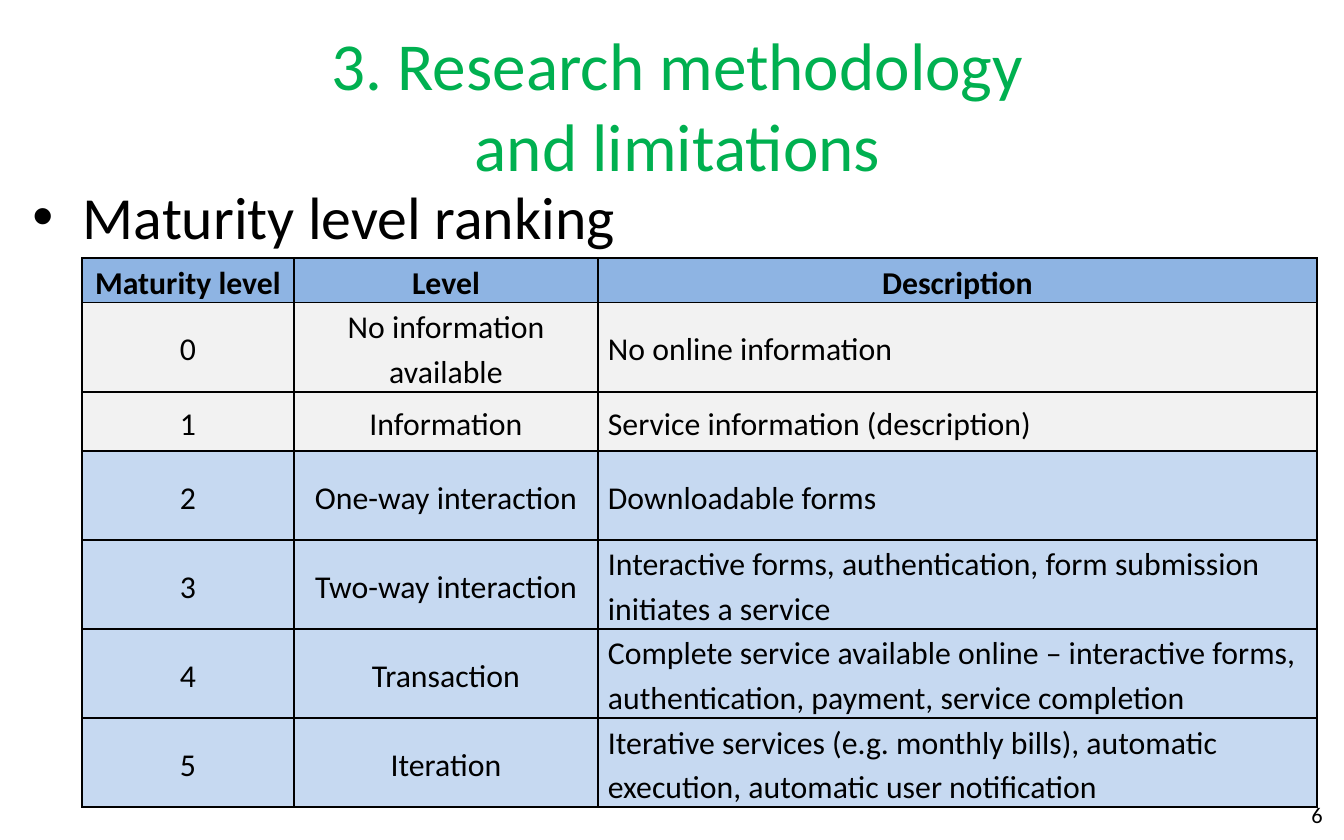
"""Build the maturity level ranking slide."""
from dataclasses import dataclass

from lxml import etree
from pptx import Presentation
from pptx.dml.color import RGBColor
from pptx.enum.text import MSO_ANCHOR, MSO_AUTO_SIZE, PP_ALIGN
from pptx.oxml.ns import qn
from pptx.util import Pt

EMU_PER_PX = 914400 / 134.4
LEFT, CENTER, RIGHT, JUSTIFY = PP_ALIGN.LEFT, PP_ALIGN.CENTER, PP_ALIGN.RIGHT, PP_ALIGN.JUSTIFY
TOP, MIDDLE = MSO_ANCHOR.TOP, MSO_ANCHOR.MIDDLE
FIXED_SIZE = MSO_AUTO_SIZE.NONE
TITLE_AND_CONTENT = 1


@dataclass(frozen=True)
class Theme:
    font: str = "Calibri"
    text: str = "000000"
    title: str = "00B050"
    header: str = "8EB4E3"
    offline: str = "F2F2F2"
    online: str = "C6D9F1"
    title_size: int = 36
    body_size: int = 32
    table_size: int = 17
    number_size: int = 12
    border_width: int = 1


def px(length):
    return round(length * EMU_PER_PX)


class SlideBuilder:
    def __init__(self, slide, theme):
        self.slide = slide
        self.theme = theme

    def format(self, paragraph, size, color, align, bold=False):
        paragraph.alignment = align
        font = paragraph.font
        font.name, font.size, font.bold = self.theme.font, Pt(size), bold
        font.color.rgb = RGBColor.from_string(color)

    def fill_text(self, shape, box, text, size, color, align, anchor):
        shape.left, shape.top, shape.width, shape.height = map(px, box)
        frame = shape.text_frame
        frame.text = text
        frame.word_wrap = True
        frame.auto_size = FIXED_SIZE
        frame.vertical_anchor = anchor
        self.format(frame.paragraphs[0], size, color, align)

    def title(self, box, text):
        self.fill_text(self.slide.shapes.title, box, text,
                       self.theme.title_size, self.theme.title, CENTER, MIDDLE)

    def body(self, box, text):
        self.fill_text(self.slide.placeholders[1], box, text,
                       self.theme.body_size, self.theme.text, LEFT, TOP)

    def page_number(self, box, text):
        shape = self.slide.shapes.add_textbox(*map(px, box))
        self.fill_text(shape, box, text,
                       self.theme.number_size, self.theme.text, RIGHT, MIDDLE)

    def borders(self, cell):
        properties = cell._tc.get_or_add_tcPr()
        for side in ("a:lnL", "a:lnR", "a:lnT", "a:lnB"):
            line = etree.SubElement(properties, qn(side), w=str(Pt(self.theme.border_width)))
            fill = etree.SubElement(line, qn("a:solidFill"))
            etree.SubElement(fill, qn("a:srgbClr"), val=self.theme.text)

    def cell(self, cell, text, fill, align, bold):
        cell.text = text
        cell.vertical_anchor = MIDDLE
        cell.margin_left = cell.margin_right = px(10)
        cell.margin_top = cell.margin_bottom = 0
        self.borders(cell)
        cell.fill.solid()
        cell.fill.fore_color.rgb = RGBColor.from_string(fill)
        paragraph = cell.text_frame.paragraphs[0]
        paragraph.line_spacing = 1.15
        paragraph.space_after = Pt(10)
        self.format(paragraph, self.theme.table_size, self.theme.text, align, bold)

    def table(self, left, top, widths, heights, header, levels):
        rows = [header] + [(str(rank), *level) for rank, level in enumerate(levels)]
        box = (left, top, sum(widths), sum(heights))
        table = self.slide.shapes.add_table(len(rows), len(widths), *map(px, box)).table
        table.first_row = table.horz_banding = False
        for column, width in zip(table.columns, widths):
            column.width = px(width)
        fills = [self.theme.header] + [self.theme.offline] * 2 + [self.theme.online] * 4
        for row_index, (row, values, height) in enumerate(zip(table.rows, rows, heights)):
            row.height = px(height)
            is_header = row_index == 0
            last = CENTER if is_header else JUSTIFY if row_index < 4 else LEFT
            for cell, text, align in zip(row.cells, values, (CENTER, CENTER, last)):
                self.cell(cell, text, fills[row_index], align, is_header)


def main():
    presentation = Presentation()
    presentation.slide_width, presentation.slide_height = px(1344), px(840)
    layout = presentation.slide_layouts[TITLE_AND_CONTENT]
    builder = SlideBuilder(presentation.slides.add_slide(layout), Theme())
    builder.body((19, 173, 1317, 664), "Maturity level ranking")
    builder.title((19, 34, 1317, 140), "3. Research methodology\vand limitations")
    builder.page_number((1023, 793, 313, 44), "6")
    builder.table(
        82, 258, (212, 304, 719), (44, 89, 59, 89, 89, 89, 89),
        ("Maturity level", "Level", "Description"),
        [
            ("No information available", "No online information"),
            ("Information", "Service information (description)"),
            ("One-way interaction", "Downloadable forms"),
            ("Two-way interaction",
             "Interactive forms, authentication, form submission initiates a service"),
            ("Transaction",
             "Complete service available online – interactive forms, "
             "authentication, payment, service completion"),
            ("Iteration",
             "Iterative services (e.g. monthly bills), automatic execution, "
             "automatic user notification"),
        ])
    presentation.save("out.pptx")


if __name__ == "__main__":
    main()
